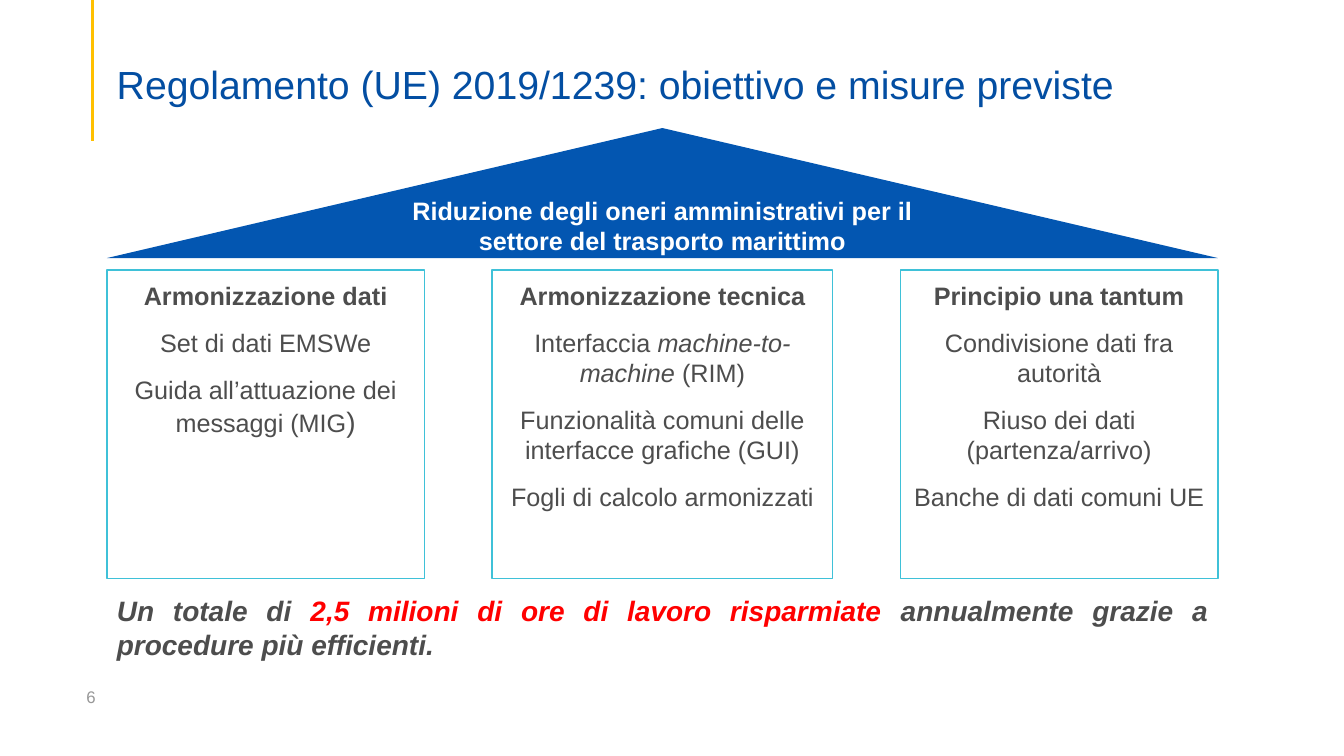
from pptx import Presentation
from pptx.dml.color import RGBColor
from pptx.enum.shapes import MSO_CONNECTOR, MSO_SHAPE
from pptx.enum.text import MSO_ANCHOR, PP_ALIGN
from pptx.oxml.ns import qn
from pptx.util import Inches, Pt
from lxml import etree

FONT = "Arial"
BLUE = RGBColor(0x03, 0x4E, 0xA2)
ROOF_BLUE = RGBColor(0x03, 0x56, 0xB1)
YELLOW = RGBColor(0xFF, 0xC0, 0x00)
TURQUOISE = RGBColor(0x3F, 0xC1, 0xD8)
DARK = RGBColor(0x4D, 0x4D, 0x4D)
GREY = RGBColor(0x97, 0x97, 0x97)
RED = RGBColor(0xFF, 0x00, 0x00)
WHITE = RGBColor(0xFF, 0xFF, 0xFF)

# Grid in inches: the content spans LEFT to LEFT + WIDTH
LEFT, WIDTH = 1.06, 11.02
PILLAR_TOP, PILLAR_HEIGHT = 2.68, 3.06
PILLAR_WIDTHS = [3.15, 3.38, 3.15]
GAP = (WIDTH - sum(PILLAR_WIDTHS)) / (len(PILLAR_WIDTHS) - 1)

# Each paragraph is a list of (text, format) runs
PILLARS = [
    [
        [("Armonizzazione dati", {"bold": True})],
        [("Set di dati EMSWe", {})],
        [("Guida all’attuazione dei messaggi (MIG", {}), (")", {"size": 20})],
    ],
    [
        [("Armonizzazione tecnica", {"bold": True})],
        [("Interfaccia ", {}), ("machine-to-machine", {"italic": True}), (" (RIM)", {})],
        [("Funzionalità comuni delle interfacce grafiche (GUI)", {})],
        [("Fogli di calcolo armonizzati", {})],
    ],
    [
        [("Principio una tantum", {"bold": True})],
        [("Condivisione dati fra autorità", {})],
        [("Riuso dei dati (partenza/arrivo)", {})],
        [("Banche di dati comuni UE", {})],
    ],
]


def add_run(paragraph, text, size=18, color=DARK, bold=False, italic=False):
    run = paragraph.add_run()
    run.text = text
    font = run.font
    font.name, font.size = FONT, Pt(size)
    font.bold, font.italic = bold, italic
    font.color.rgb = color


def write(shape, paragraphs, align=PP_ALIGN.LEFT, anchor=MSO_ANCHOR.TOP,
          top=0.05, bottom=0.05, after=0, spacing=None, **style):
    frame = shape.text_frame
    frame.word_wrap = True
    frame.vertical_anchor = anchor
    frame.margin_left = frame.margin_right = Inches(0.1)
    frame.margin_top, frame.margin_bottom = Inches(top), Inches(bottom)
    for index, runs in enumerate(paragraphs):
        paragraph = frame.add_paragraph() if index else frame.paragraphs[0]
        paragraph.alignment = align
        paragraph.space_after = Pt(after)
        if spacing:
            paragraph.line_spacing = spacing
        for text, changes in runs:
            add_run(paragraph, text, **{**style, **changes})


def add_text(slide, box, runs, **options):
    shape = slide.shapes.add_textbox(*map(Inches, box))
    write(shape, [runs], **options)


def add_block(slide, kind, box, fill, line=None):
    shape = slide.shapes.add_shape(kind, *map(Inches, box))
    shape.shadow.inherit = False
    shape.fill.solid()
    shape.fill.fore_color.rgb = fill
    if line is None:
        shape.line.fill.background()
    else:
        shape.line.color.rgb = line
        shape.line.width = Pt(1)
    return shape


def add_accent(slide, x, bottom):
    accent = slide.shapes.add_connector(
        MSO_CONNECTOR.STRAIGHT, Inches(x), 0, Inches(x), Inches(bottom))
    accent.line.color.rgb = YELLOW
    accent.line.width = Pt(2.25)
    etree.SubElement(accent.element.spPr, qn("a:effectLst"))


def add_pillars(slide):
    left = LEFT
    for width, paragraphs in zip(PILLAR_WIDTHS, PILLARS):
        pillar = add_block(slide, MSO_SHAPE.RECTANGLE,
                           (left, PILLAR_TOP, width, PILLAR_HEIGHT), WHITE, TURQUOISE)
        write(pillar, paragraphs, align=PP_ALIGN.CENTER, top=0.1, after=12)
        left += width + GAP


def add_roof(slide):
    roof = add_block(slide, MSO_SHAPE.ISOSCELES_TRIANGLE,
                     (LEFT, 1.27, WIDTH, 1.29), ROOF_BLUE)
    goal = "Riduzione degli oneri amministrativi per il settore del trasporto marittimo"
    write(roof, [[(goal, {})]], align=PP_ALIGN.CENTER, anchor=MSO_ANCHOR.MIDDLE,
          color=WHITE, bold=True)


def main():
    presentation = Presentation()
    presentation.slide_width, presentation.slide_height = Inches(13.33), Inches(7.5)
    slide = presentation.slides.add_slide(presentation.slide_layouts[6])

    # Accent line, page number and title
    add_accent(slide, 0.92, 1.4)
    add_text(slide, (0.76, 6.71, 3, 0.4), [("6", {})],
             anchor=MSO_ANCHOR.MIDDLE, size=12, color=GREY)
    add_text(slide, (LEFT, 0.46, 11.5, 0.61),
             [("Regolamento (UE) 2019/1239: obiettivo e misure previste", {})],
             anchor=MSO_ANCHOR.BOTTOM, bottom=0, spacing=0.9, size=28, color=BLUE)

    # House: three measures carrying the goal
    add_pillars(slide)
    add_roof(slide)

    # Closing statement
    add_text(slide, (LEFT, 5.84, WIDTH, 0.77),
             [("Un totale di ", {}),
              ("2,5 milioni di ore di lavoro risparmiate ", {"color": RED}),
              ("annualmente grazie a procedure più efficienti.", {})],
             align=PP_ALIGN.JUSTIFY, size=20, bold=True, italic=True)

    presentation.save("out.pptx")


if __name__ == "__main__":
    main()
